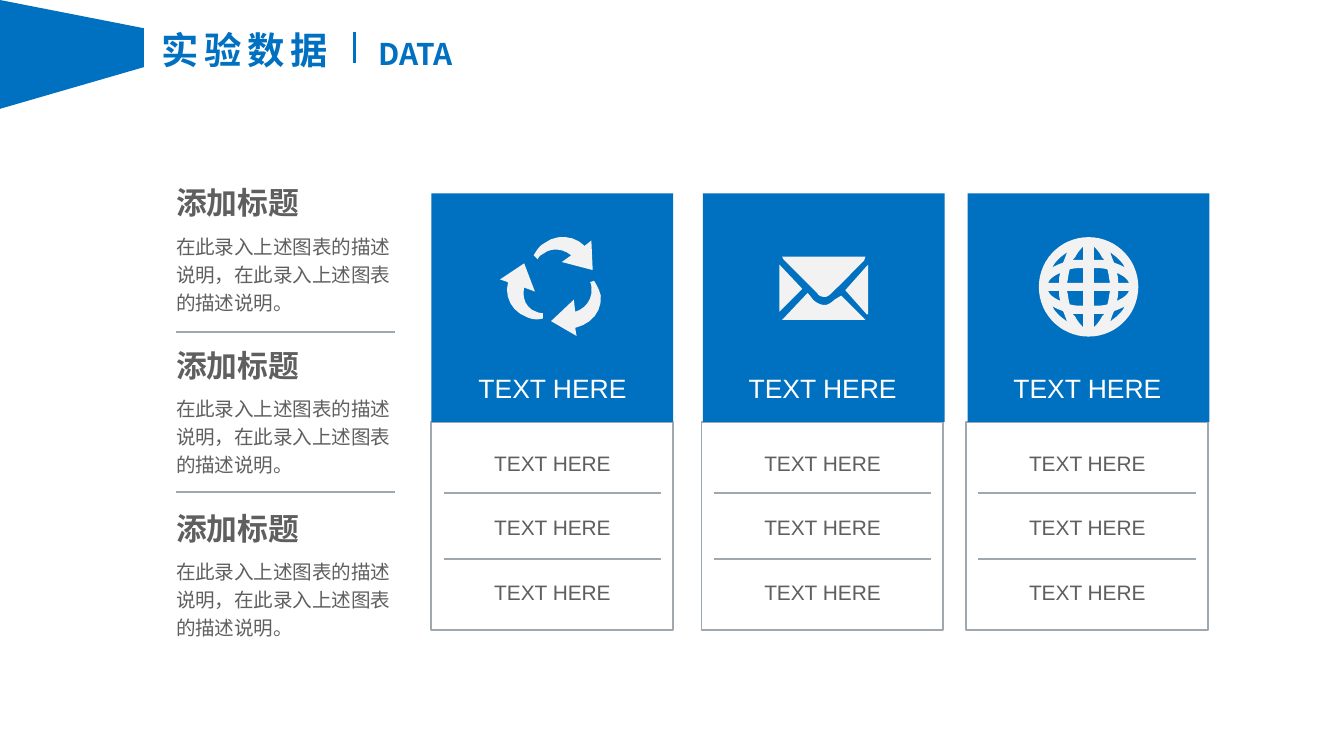
from itertools import product
from math import cos, pi, sin

from lxml.etree import SubElement
from pptx import Presentation
from pptx.dml.color import RGBColor
from pptx.enum.shapes import MSO_CONNECTOR as Connector, MSO_SHAPE as Preset
from pptx.enum.text import MSO_ANCHOR as Anchor, MSO_AUTO_SIZE as AutoSize, PP_ALIGN as Align
from pptx.oxml.ns import qn
from pptx.util import Inches, Pt

BLUE, GREY, RULE, WHITE, ICON = "0070C0", "5F5F5F", "9DA8B1", "FFFFFF", "F2F2F2"
HAN, LATIN = "Noto Sans CJK SC", "Arial"
BLURB = "在此录入上述图表的描述说明，在此录入上述图表的描述说明。"

TITLE = dict(name=HAN, size=Pt(20), bold=True, color=BLUE)
SUBTITLE = dict(TITLE, size=Pt(16))
HEADING = dict(name=HAN, size=Pt(16.5), bold=True, color=GREY)
BODY = dict(name=HAN, size=Pt(10.5), color=GREY)
CARD_TITLE = dict(name=LATIN, size=Pt(14.2), color=WHITE)
CARD_ITEM = dict(name=LATIN, size=Pt(11.2), color=GREY)
TIGHT = dict(margin_left=Inches(0.07), margin_right=Inches(0.07),
             margin_top=Inches(0.04), margin_bottom=Inches(0.04))

# A pair is a corner; six numbers are a cubic curve from the last point.
BANNER = [[(0, 0), (1.07, 0.21), (1.07, 0.5), (0, 0.81)]]
ARROWS = [
    [(4.29, 2.5), (4.1, 2.39), (4.27, 2.23), (4.28, 2.32), (4.35, 2.3, 4.41, 2.23, 4.4, 2.15),
     (4.4, 2.13, 4.4, 2.11, 4.39, 2.1), (4.42, 2.09), (4.44, 2.12, 4.46, 2.16, 4.47, 2.2),
     (4.48, 2.32, 4.4, 2.41, 4.28, 2.44)],
    [(3.72, 2.08), (3.9, 1.96), (3.98, 2.17), (3.9, 2.14), (3.88, 2.22, 3.92, 2.3, 3.99, 2.32),
     (4.01, 2.33, 4.03, 2.33, 4.04, 2.33), (4.04, 2.37), (4.01, 2.38, 3.96, 2.38, 3.92, 2.36),
     (3.81, 2.32, 3.75, 2.21, 3.78, 2.1)],
    [(4.4, 1.79), (4.35, 1.83), (4.27, 1.75, 4.14, 1.74, 4.05, 1.81),
     (4.01, 1.83, 3.99, 1.87, 3.97, 1.9), (4, 1.93), (4.01, 1.91, 4.02, 1.9, 4.04, 1.89),
     (4.1, 1.84, 4.19, 1.85, 4.25, 1.9), (4.18, 1.95), (4.41, 2.01)],
]
ENVELOPE = [
    [(5.8, 1.97), (5.8, 2.32), (5.97, 2.15)],
    [(6.01, 2.11), (6.08, 2.18), (6.09, 2.2, 6.11, 2.21, 6.14, 2.21),
     (6.15, 2.21, 6.17, 2.2, 6.19, 2.18), (6.26, 2.11), (6.43, 1.94), (6.44, 1.91),
     (5.82, 1.91), (5.83, 1.93)],
    [(6.26, 2.2), (6.21, 2.23), (6.19, 2.25, 6.16, 2.27, 6.14, 2.27),
     (6.1, 2.27, 6.07, 2.25, 6.05, 2.23), (6.01, 2.18), (5.83, 2.37), (5.82, 2.38),
     (6.44, 2.38), (6.43, 2.37)],
    [(6.45, 1.98), (6.29, 2.16), (6.45, 2.34), (6.46, 2.34), (6.46, 1.97)],
]
# Holes in one quarter of the globe, measured from its centre.
GLOBE_HOLES = [
    [(0.04, 0.3), (0.04, 0.2), (0.12, 0.2), (0.1, 0.22), (0.08, 0.26, 0.06, 0.28, 0.04, 0.3)],
    [(0.04, 0.14), (0.04, 0.03), (0.16, 0.03), (0.15, 0.07, 0.15, 0.1, 0.14, 0.13),
     (0.11, 0.14, 0.07, 0.14, 0.04, 0.14)],
    [(0.22, 0.03), (0.3, 0.03), (0.29, 0.06, 0.26, 0.08, 0.22, 0.1), (0.21, 0.1),
     (0.22, 0.08, 0.22, 0.05, 0.22, 0.03)],
    [(0.19, 0.18), (0.22, 0.17, 0.24, 0.16, 0.26, 0.15), (0.27, 0.14),
     (0.26, 0.17, 0.24, 0.19, 0.22, 0.21), (0.2, 0.23, 0.18, 0.24, 0.16, 0.26),
     (0.17, 0.23, 0.18, 0.2, 0.19, 0.18)],
]


def rgb(value):
    return RGBColor.from_string(value)


def flatten(outline, pieces=6):
    """Turn the curves of an outline into short straight pieces."""
    points = []
    for step in outline:
        if len(step) == 2:
            points.append(step)
            continue
        corners = [points[-1], step[:2], step[2:4], step[4:]]
        for piece in range(1, pieces + 1):
            t = piece / pieces
            weights = ((1 - t) ** 3, 3 * t * (1 - t) ** 2, 3 * t * t * (1 - t), t ** 3)
            points.append(tuple(sum(w * corner[axis] for w, corner in zip(weights, corners))
                                for axis in (0, 1)))
    return points


def globe(x, y, radius, sides=60):
    """Outlines of a disc with the quarter's holes mirrored both ways."""
    angles = [2 * pi * side / sides for side in range(sides)]
    disc = [(x + radius * cos(a), y + radius * sin(a)) for a in angles]
    holes = [[(x + right * dx, y + down * dy) for dx, dy in flatten(hole)]
             for hole, right, down in product(GLOBE_HOLES, (-1, 1), (-1, 1))]
    return [disc] + holes


class SlideMaker:
    def __init__(self, page):
        self.page = page
        self.shapes = page.shapes

    def fill_text(self, box, words, style, wrap=True, align=Align.LEFT, spacing=None,
                  tracking=None, margins=None):
        frame = box.text_frame
        settings = dict(word_wrap=wrap, auto_size=AutoSize.SHAPE_TO_FIT_TEXT,
                        vertical_anchor=Anchor.TOP, **(margins or {}))
        for key, value in settings.items():
            setattr(frame, key, value)
        para = frame.paragraphs[0]
        para.alignment = align
        if spacing:
            para.line_spacing = spacing
        span = para.add_run()
        span.text = words
        for key, value in style.items():
            if key == "color":
                span.font.color.rgb = rgb(value)
            else:
                setattr(span.font, key, value)
        properties = span._r.get_or_add_rPr()
        SubElement(properties, qn("a:ea")).set("typeface", style["name"])
        if tracking:
            properties.set("spc", str(tracking * 100))

    def title(self, at, words, style, **options):
        box = self.shapes.title
        for key, value in zip(("left", "top", "width", "height"), at):
            setattr(box, key, Inches(value))
        self.fill_text(box, words, style, **options)

    def text(self, at, words, style, **options):
        box = self.shapes.add_textbox(*map(Inches, at))
        self.fill_text(box, words, style, **options)

    def paint(self, shape, fill=None, line=None):
        shape.shadow.inherit = False
        if fill:
            shape.fill.solid()
            shape.fill.fore_color.rgb = rgb(fill)
        else:
            shape.fill.background()
        if line:
            shape.line.color.rgb = rgb(line)
            shape.line.width = Pt(1)
        else:
            shape.line.fill.background()

    def rectangle(self, at, **colors):
        self.paint(self.shapes.add_shape(Preset.RECTANGLE, *map(Inches, at)), **colors)

    def outline(self, outlines, fill):
        contours = [[(Inches(x), Inches(y)) for x, y in flatten(item)] for item in outlines]
        builder = self.shapes.build_freeform(*contours[0][0])
        for index, (start, *rest) in enumerate(contours):
            if index:
                builder.move_to(*start)
            builder.add_line_segments(rest, close=True)
        self.paint(builder.convert_to_shape(), fill=fill)

    def line(self, x1, y1, x2, y2, color=RULE, width=1):
        rule = self.shapes.add_connector(Connector.STRAIGHT, *map(Inches, (x1, y1, x2, y2)))
        rule.line.color.rgb = rgb(color)
        rule.line.width = Pt(width)
        SubElement(rule._element.spPr, qn("a:effectLst"))


def main():
    deck = Presentation()
    deck.slide_width, deck.slide_height = Inches(10), Inches(10 * 9 / 16)
    maker = SlideMaker(deck.slides.add_slide(deck.slide_layouts[5]))

    maker.outline(BANNER, BLUE)
    maker.title((1.1, 0.15, 1.49, 0.44), "实验数据", TITLE, wrap=False, tracking=3)
    maker.text((2.72, 0.22, 0.82, 0.37), "DATA", SUBTITLE, wrap=False)
    maker.line(2.64, 0.24, 2.64, 0.47, BLUE, 1.5)

    for row in range(3):
        top = 1.33 + 1.21 * row
        maker.text((1.24, top, 1.21, 0.35), "添加标题", HEADING, margins=TIGHT)
        maker.text((1.24, top + 0.34, 1.86, 0.71), BLURB, BODY, spacing=1.2, margins=TIGHT)
    for y in (2.47, 3.66):
        maker.line(1.31, y, 2.94, y)

    icons = (ARROWS, ENVELOPE, globe(8.1, 2.135, 0.37))
    for left, header_left, icon in zip((3.3, 5.31, 7.28), (3.21, 5.23, 7.2), icons):
        maker.rectangle((left - 0.09, 3.14, 1.8, 1.55), line=RULE)
        for row in range(3):
            maker.text((left, 3.3 + 0.48 * row, 1.62, 0.29), "TEXT HERE", CARD_ITEM,
                       align=Align.CENTER)
        for y in (3.67, 4.16):
            maker.line(left, y, left + 1.62, y)
        maker.rectangle((header_left, 1.44, 1.8, 1.7), fill=BLUE)
        maker.outline(icon, ICON)
        maker.text((left, 2.72, 1.62, 0.34), "TEXT HERE", CARD_TITLE, align=Align.CENTER)

    deck.save("out.pptx")


if __name__ == "__main__":
    main()
